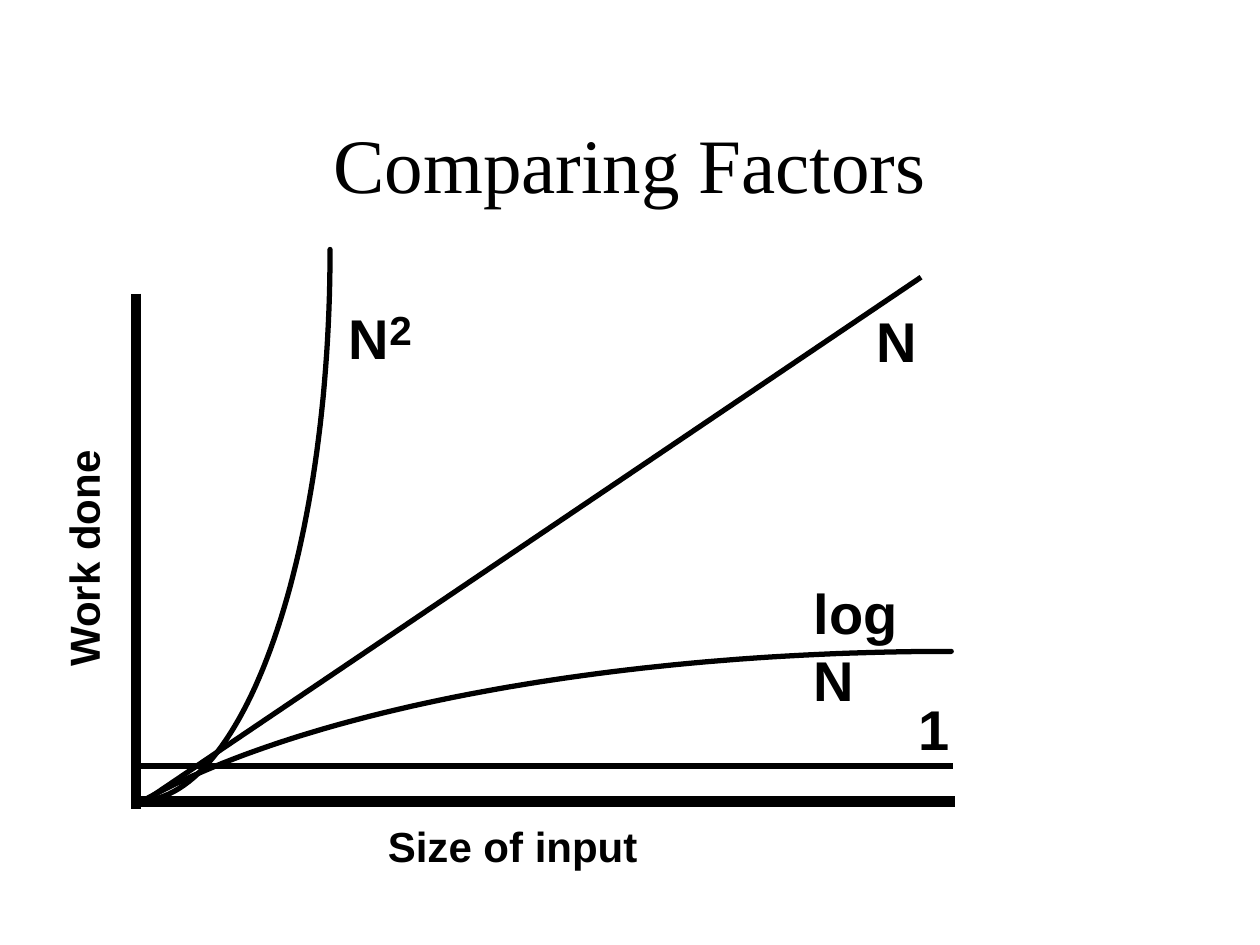
from pptx import Presentation
from pptx.dml.color import RGBColor
from pptx.enum.shapes import MSO_CONNECTOR as Link
from pptx.enum.text import MSO_ANCHOR as Anchor, PP_ALIGN as Align
from pptx.util import Inches, Pt
from lxml.etree import SubElement
from pptx.oxml.ns import qn

INK = "000000"
TITLE = "Comparing Factors"

# Text, box (left, top, width, height), format
LABELS = [
    ("N", (6.86, 2.38, 0.52, 0.63), {}),
    ("log N", (6.36, 4.54, 1.2, 1.1), {"wrap": True}),
    ("N", (2.67, 2.25, 0.73, 0.63), {"power": "2"}),
    ("1", (7.19, 5.46, 0.45, 0.63), {}),
    ("Size of input", (2.98, 6.46, 2.18, 0.5), {"size": 24}),
    ("Work done", (-0.3, 4.18, 1.92, 0.5), {"size": 24, "turn": 270}),
]

# Start, end, weight
LINES = [
    ((1.08, 2.33), (1.08, 6.42), 6),  # work axis
    ((1.04, 6.36), (7.58, 6.36), 6),  # size axis
    ((1.06, 6.08), (7.56, 6.08), 3),  # constant
    ((1.16, 6.35), (7.31, 2.2), 3),   # linear
]

# Four control points of each Bezier curve
CURVES = [
    ((2.62, 1.98), (2.62, 4.4), (1.94, 6.36), (1.09, 6.36)),  # square
    ((7.55, 5.17), (4.88, 5.17), (2.41, 5.63), (1.11, 6.37)),  # log
]
STEPS = 60


def color(code):
    return RGBColor.from_string(code)


def write(frame, text, size=32, font="Arial", bold=True, align=Align.LEFT,
          wrap=False, power=""):
    frame.word_wrap = wrap
    para = frame.paragraphs[0]
    para.alignment = align
    for part, points in ((text, size), (power, 40)):
        if not part:
            continue
        run = para.add_run()
        run.text = part
        run.font.size = Pt(points)
        run.font.name = font
        run.font.bold = bold
        run.font.color.rgb = color(INK)
    if power:
        run.font._element.set("baseline", "20000")


def stroke(line, weight):
    line.color.rgb = color(INK)
    line.width = Pt(weight)


def bezier(ends, t):
    mix = ((1 - t) ** 3, 3 * t * (1 - t) ** 2, 3 * t * t * (1 - t), t ** 3)
    return tuple(Inches(sum(m * p[axis] for m, p in zip(mix, ends)))
                 for axis in (0, 1))


deck = Presentation()
deck.slide_width, deck.slide_height = Inches(10), Inches(7.5)
slide = deck.slides.add_slide(deck.slide_layouts[5])
shapes = slide.shapes

# Title
title = shapes.title
title.left, title.top, title.width, title.height = map(
    Inches, (0.75, 0.67, 8.5, 1.25))
title.text_frame.vertical_anchor = Anchor.MIDDLE
write(title.text_frame, TITLE, size=44, font="Times New Roman", bold=False,
      align=Align.CENTER, wrap=True)

# Axes and straight lines
for start, end, weight in LINES:
    line = shapes.add_connector(Link.STRAIGHT, *map(Inches, start + end))
    stroke(line.line, weight)
    SubElement(line._element.spPr, qn("a:effectLst"))

# Growth curves
for ends in CURVES:
    dots = [bezier(ends, i / STEPS) for i in range(STEPS + 1)]
    pen = shapes.build_freeform(*dots[0])
    pen.add_line_segments(dots[1:], close=False)
    curve = pen.convert_to_shape()
    curve.fill.background()
    stroke(curve.line, 3)
    curve.line._get_or_add_ln().set("cap", "rnd")
    curve.shadow.inherit = False

# Labels
for text, place, form in LABELS:
    box = shapes.add_textbox(*map(Inches, place))
    look = dict(form)
    box.rotation = look.pop("turn", 0)
    write(box.text_frame, text, **look)

deck.save("out.pptx")
